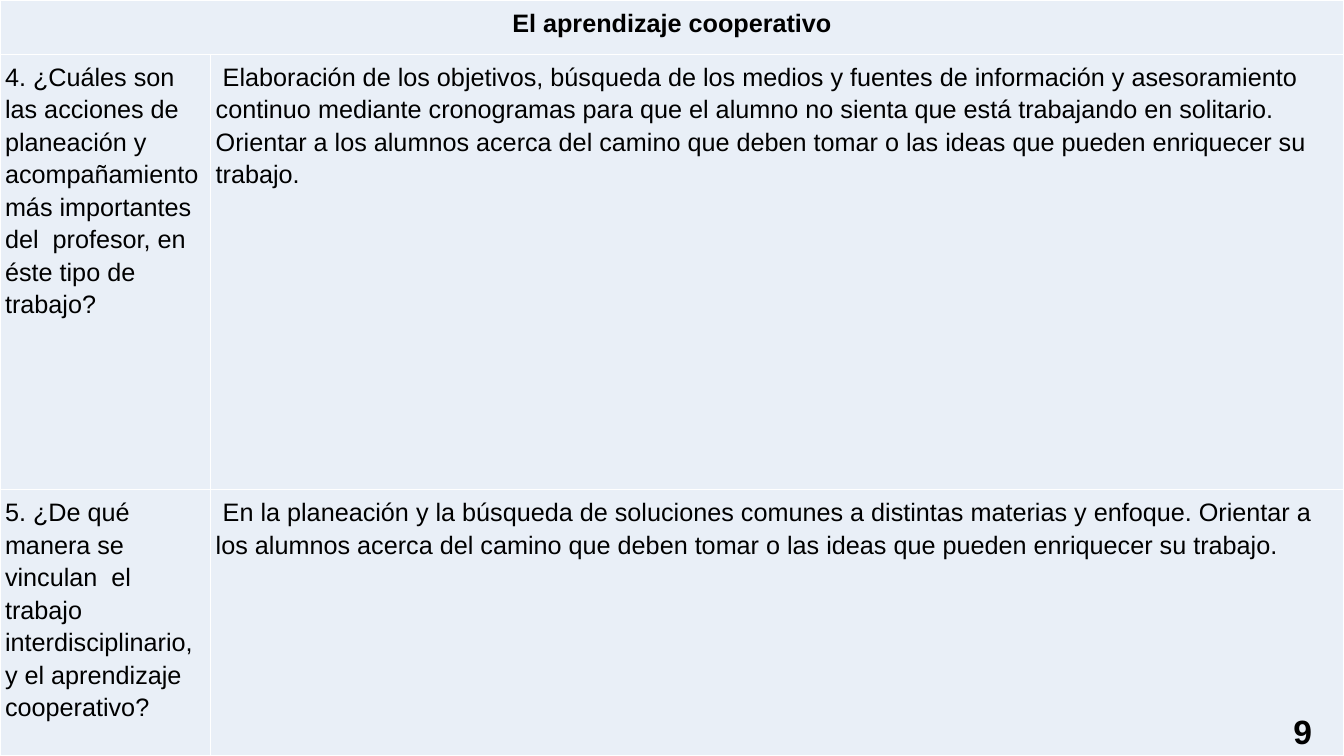
from dataclasses import dataclass

from lxml.etree import SubElement
from pptx import Presentation
from pptx.dml.color import RGBColor
from pptx.enum.text import MSO_ANCHOR, PP_ALIGN as Align
from pptx.oxml.ns import qn
from pptx.table import _Cell as Cell
from pptx.text.text import _Paragraph as Paragraph
from pptx.util import Emu, Pt

EMU_PER_PX = 9144


@dataclass(frozen=True)
class Theme:
    font: str = "Arial"
    text: str = "000000"
    cell: str = "E9EFF7"
    border: str = "FFFFFF"
    body_size: int = 18
    number_size: int = 24
    border_width: int = 1
    line_spacing: float = 1.15


@dataclass(frozen=True)
class QuestionRow:
    question: str
    answer: str
    height: int


THEME = Theme()
PAGE_WIDTH, PAGE_HEIGHT = 1333, 750
QUESTION_WIDTH = 209
HEADER_HEIGHT = 54
CELL_INSET = 5
HEADER = "El aprendizaje cooperativo"
QUESTION_ROWS = [
    QuestionRow(
        "4. ¿Cuáles son las acciones de planeación y acompañamiento más "
        "importantes del  profesor, en éste tipo de trabajo?",
        " Elaboración de los objetivos, búsqueda de los medios y fuentes de "
        "información y asesoramiento continuo mediante cronogramas para que el "
        "alumno no sienta que está trabajando en solitario. Orientar a los "
        "alumnos acerca del camino que deben tomar o las ideas que pueden "
        "enriquecer su trabajo.",
        432,
    ),
    QuestionRow(
        "5. ¿De qué manera se vinculan  el trabajo interdisciplinario, y el "
        "aprendizaje cooperativo?",
        " En la planeación y la búsqueda de soluciones comunes a distintas "
        "materias y enfoque. Orientar a los alumnos acerca del camino que deben "
        "tomar o las ideas que pueden enriquecer su trabajo.",
        264,
    ),
]


def px(length: int) -> Emu:
    return Emu(length * EMU_PER_PX)


def add_run(para: Paragraph, text: str, size: int, bold: bool) -> None:
    run = para.add_run()
    run.text = text
    run.font.name = THEME.font
    run.font.size = Pt(size)
    run.font.bold = bold
    run.font.color.rgb = RGBColor.from_string(THEME.text)


def add_borders(cell: Cell) -> None:
    """Line all four sides; the schema wants the lines ahead of the fill."""
    properties = cell._tc.get_or_add_tcPr()
    for index, side in enumerate(("lnL", "lnR", "lnT", "lnB")):
        line = SubElement(properties, qn(f"a:{side}"), w=str(Pt(THEME.border_width)))
        fill = SubElement(line, qn("a:solidFill"))
        SubElement(fill, qn("a:srgbClr"), val=THEME.border)
        properties.insert(index, line)


def style_cell(cell: Cell) -> None:
    cell.fill.solid()
    cell.fill.fore_color.rgb = RGBColor.from_string(THEME.cell)
    cell.margin_left = cell.margin_right = px(CELL_INSET)
    cell.margin_top = cell.margin_bottom = px(CELL_INSET)
    cell.vertical_anchor = MSO_ANCHOR.TOP
    add_borders(cell)


def write_cell(cell: Cell, text: str, bold: bool = False,
               align: Align = Align.LEFT) -> None:
    para = cell.text_frame.paragraphs[0]
    para.alignment = align
    para.line_spacing = THEME.line_spacing
    add_run(para, text, THEME.body_size, bold)


def add_question_table(page) -> None:
    heights = [HEADER_HEIGHT] + [row.height for row in QUESTION_ROWS]
    widths = [QUESTION_WIDTH, PAGE_WIDTH - QUESTION_WIDTH]
    table = page.shapes.add_table(len(heights), len(widths), 0, 0,
                                  px(PAGE_WIDTH), px(PAGE_HEIGHT)).table
    table.first_row = table.horz_banding = False
    for row, height in zip(table.rows, heights):
        row.height = px(height)
    for column, width in zip(table.columns, widths):
        column.width = px(width)
    for cell in table.iter_cells():
        style_cell(cell)

    header = table.cell(0, 0)
    header.merge(table.cell(0, 1))
    write_cell(header, HEADER, bold=True, align=Align.CENTER)
    for index, row in enumerate(QUESTION_ROWS, start=1):
        write_cell(table.cell(index, 0), row.question)
        write_cell(table.cell(index, 1), row.answer)


def add_page_number(page, number: str) -> None:
    box = page.shapes.add_textbox(px(1273), px(700), px(60), px(50))
    box.text_frame.word_wrap = True
    add_run(box.text_frame.paragraphs[0], number, THEME.number_size, bold=True)


def main() -> None:
    deck = Presentation()
    deck.slide_width, deck.slide_height = px(PAGE_WIDTH), px(PAGE_HEIGHT)
    page = deck.slides.add_slide(deck.slide_layouts.get_by_name("Blank"))
    add_question_table(page)
    add_page_number(page, "9")
    deck.save("out.pptx")


if __name__ == "__main__":
    main()
